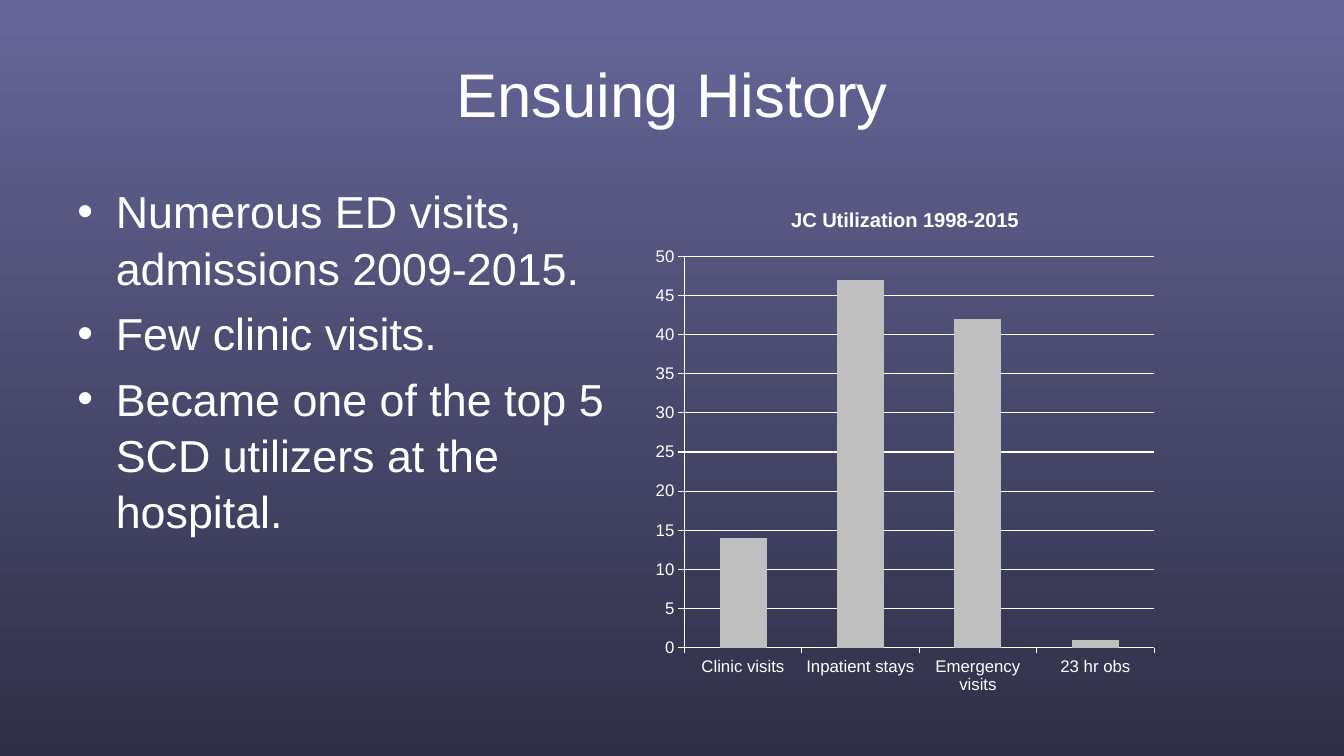
from lxml.etree import SubElement
from pptx import Presentation
from pptx.chart.data import CategoryChartData
from pptx.dml.color import RGBColor
from pptx.enum.chart import XL_CHART_TYPE, XL_TICK_MARK
from pptx.enum.text import MSO_ANCHOR, PP_ALIGN
from pptx.oxml.ns import qn
from pptx.util import Inches, Pt


def color(value):
    return RGBColor.from_string(value)


class Deck:
    """Holds the style and current slide, and draws each kind of element."""

    font_name = "Arial"
    text_color = "FFFFFF"
    bar_color = "BFBFBF"
    gradient = ("666699", "2F2F47")

    def __init__(self, slide):
        self.slide = slide

    def style(self, font, size, bold=False):
        font.name = self.font_name
        font.size = Pt(size)
        font.bold = bold
        font.color.rgb = color(self.text_color)

    def background(self):
        fill = self.slide.background.fill
        fill.gradient()
        fill.gradient_angle = 270
        for stop, value in zip(fill.gradient_stops, self.gradient):
            stop.color.rgb = color(value)

    def text_frame(self, left, top, width, height, anchor):
        box = self.slide.shapes.add_textbox(
            Inches(left), Inches(top), Inches(width), Inches(height))
        frame = box.text_frame
        frame.word_wrap = True
        frame.vertical_anchor = anchor
        return frame

    def title(self, text, *place):
        heading = self.text_frame(*place, MSO_ANCHOR.MIDDLE).paragraphs[0]
        heading.text = text
        heading.alignment = PP_ALIGN.CENTER
        self.style(heading.font, 44)

    def bullets(self, points, *place):
        frame = self.text_frame(*place, MSO_ANCHOR.TOP)
        frame.text = "\n".join(points)
        for index, point in enumerate(frame.paragraphs):
            properties = point._p.get_or_add_pPr()
            properties.set("marL", str(Inches(0.38)))
            properties.set("indent", str(-Inches(0.38)))
            SubElement(properties, qn("a:buFont"), typeface=self.font_name)
            SubElement(properties, qn("a:buChar"), char="•")
            point.line_spacing = 1.05
            if index:
                point.space_before = Pt(6.4)
            self.style(point.font, 32)

    def line(self, line_format):
        line_format.color.rgb = color(self.text_color)
        line_format.width = Pt(0.75)

    def column_chart(self, title, visits, left, top, width, height):
        data = CategoryChartData()
        data.categories = list(visits)
        data.add_series("Series 1", list(visits.values()))
        chart = self.slide.shapes.add_chart(
            XL_CHART_TYPE.COLUMN_CLUSTERED, Inches(left), Inches(top),
            Inches(width), Inches(height), data).chart
        self.style(chart.font, 12)
        chart.has_legend = False
        chart.has_title = True
        heading = chart.chart_title.text_frame.paragraphs[0]
        heading.text = title
        self.style(heading.font, 14.4, bold=True)
        chart.chart_title.include_in_layout = False
        for axis in (chart.category_axis, chart.value_axis):
            axis.major_tick_mark = XL_TICK_MARK.OUTSIDE
            axis.minor_tick_mark = XL_TICK_MARK.NONE
            self.line(axis.format.line)
        scale = chart.value_axis
        scale.minimum_scale, scale.maximum_scale, scale.major_unit = 0, 50, 5
        scale.has_major_gridlines = True
        self.line(scale.major_gridlines.format.line)
        columns = chart.plots[0]
        columns.gap_width = 150
        columns.vary_by_categories = False
        bars = columns.series[0].format.fill
        bars.solid()
        bars.fore_color.rgb = color(self.bar_color)


def main():
    presentation = Presentation()
    presentation.slide_width = Inches(13.33)
    presentation.slide_height = Inches(7.5)
    deck = Deck(presentation.slides.add_slide(presentation.slide_layouts[6]))
    deck.background()
    deck.title("Ensuing History", 0.67, 0.3, 12, 1.25)
    deck.bullets(
        ["Numerous ED visits, admissions 2009-2015.",
         "Few clinic visits.",
         "Became one of the top 5 SCD utilizers at the hospital."],
        0.67, 1.75, 5.89, 4.95)
    deck.column_chart(
        "JC Utilization 1998-2015",
        {"Clinic visits": 14, "Inpatient stays": 47,
         "Emergency visits": 42, "23 hr obs": 1},
        6.4, 1.86, 5.15, 5.12)
    presentation.save("out.pptx")


if __name__ == "__main__":
    main()
